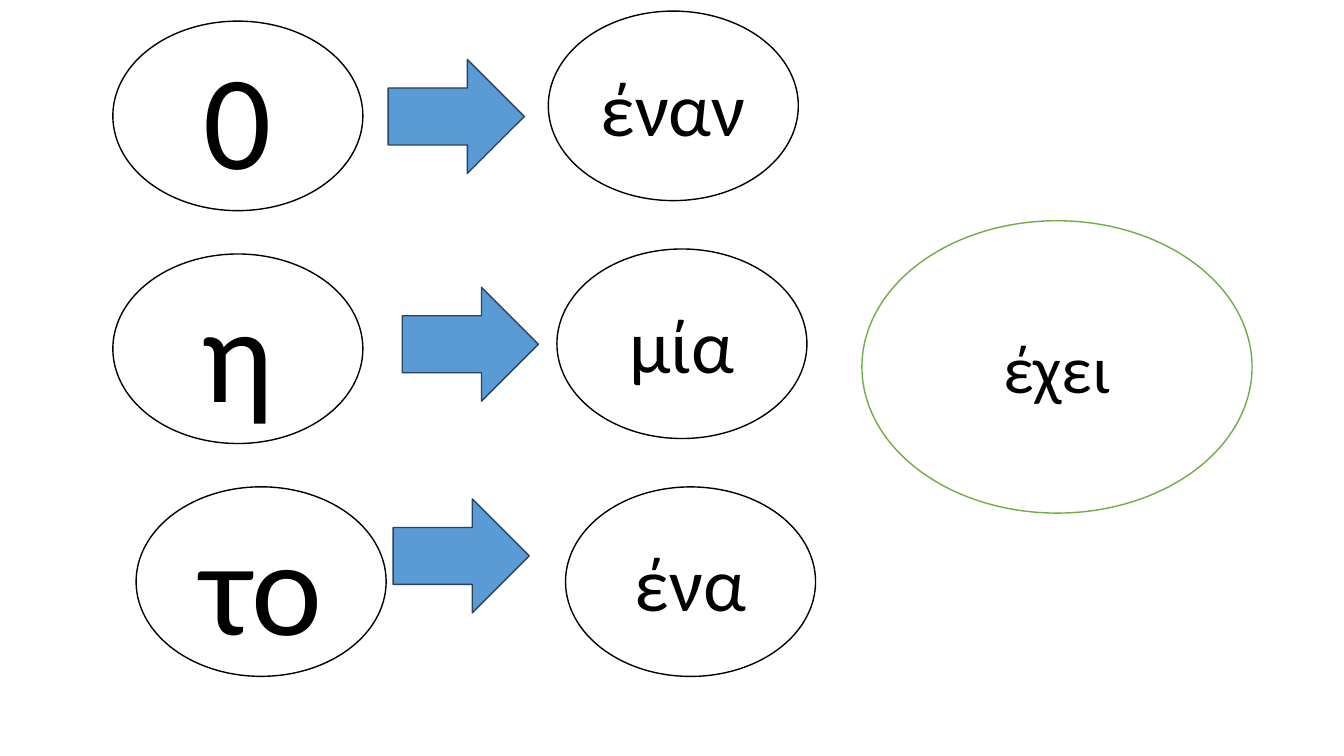
"""Build a slide that links Greek articles to their numerals and a verb."""
import dataclasses

import pptx
import pptx.dml.color
import pptx.enum.shapes
import pptx.enum.text
import pptx.util

SHAPES = pptx.enum.shapes.MSO_SHAPE
COLUMNS = ROWS = 100


@dataclasses.dataclass(frozen=True)
class Theme:
    """Hold the colours, type sizes and font of the slide."""

    font: str = "Calibri"
    paper: str = "FFFFFF"
    ink: str = "000000"
    arrow: str = "5B9BD5"
    arrow_edge: str = "28445D"
    verb_edge: str = "70AD47"
    article_size: int = 96
    numeral_size: int = 54
    verb_size: int = 48
    line_width: int = 1


THEME = Theme()
ARTICLES = [("0", 8.4), ("η", 8.4), ("το", 10.13)]
NUMERALS = ["έναν", "μία", "ένα"]
ARROWS = [(28.88, 7.87), (29.93, 38), (29.25, 66)]
WORD_SIZE = (18.6, 25.07)
ARROW_SIZE = (10.13, 15.07)


def apply_format(target, values):
    """Set each named attribute of the target."""
    for name, value in values.items():
        setattr(target, name, value)


def rgb(colour):
    """Turn a hex string into a colour."""
    return pptx.dml.color.RGBColor.from_string(colour)


def add_figure(deck, page, kind, place, size, fill, edge):
    """Add a filled, outlined shape placed in grid columns and rows."""
    column, row = deck.slide_width / COLUMNS, deck.slide_height / ROWS
    lengths = zip(place + size, (column, row) * 2)
    figure = page.shapes.add_shape(kind, *(round(share * unit) for share, unit in lengths))
    figure.shadow.inherit = False
    figure.fill.solid()
    figure.fill.fore_color.rgb = rgb(fill)
    figure.line.color.rgb = rgb(edge)
    figure.line.width = pptx.util.Pt(THEME.line_width)
    return figure


def add_word(deck, page, text, place, type_size, size=WORD_SIZE, edge=THEME.ink):
    """Add an oval with one centred word."""
    oval = add_figure(deck, page, SHAPES.OVAL, place, size, THEME.paper, edge)
    frame = oval.text_frame
    apply_format(frame, {"word_wrap": True, "vertical_anchor": pptx.enum.text.MSO_ANCHOR.MIDDLE})
    para = frame.paragraphs[0]
    para.alignment = pptx.enum.text.PP_ALIGN.CENTER
    span = para.add_run()
    span.text = text
    apply_format(span.font, {"name": THEME.font, "size": pptx.util.Pt(type_size)})
    span.font.color.rgb = rgb(THEME.ink)


def add_arrow(deck, page, place):
    """Add a block arrow that points right."""
    arrow = add_figure(
        deck, page, SHAPES.LEFT_ARROW, place, ARROW_SIZE, THEME.arrow, THEME.arrow_edge
    )
    arrow.rotation = 180


def main():
    """Build and save the deck."""
    deck = pptx.Presentation()
    apply_format(
        deck,
        {"slide_width": pptx.util.Inches(13.33), "slide_height": pptx.util.Inches(7.5)},
    )
    page = deck.slides.add_slide(deck.slide_layouts[6])
    for index, (article, left) in enumerate(ARTICLES):
        add_word(deck, page, article, (left, 2.8 + 30.8 * index), THEME.article_size)
    for index, numeral in enumerate(NUMERALS):
        place = (40.8 + 0.64 * index, 1.47 + 31.47 * index)
        add_word(deck, page, numeral, place, THEME.numeral_size)
    for place in ARROWS:
        add_arrow(deck, page, place)
    add_word(
        deck, page, "έχει", (64.13, 29.2), THEME.verb_size, (29.03, 38.67), THEME.verb_edge
    )
    deck.save("out.pptx")


if __name__ == "__main__":
    main()
